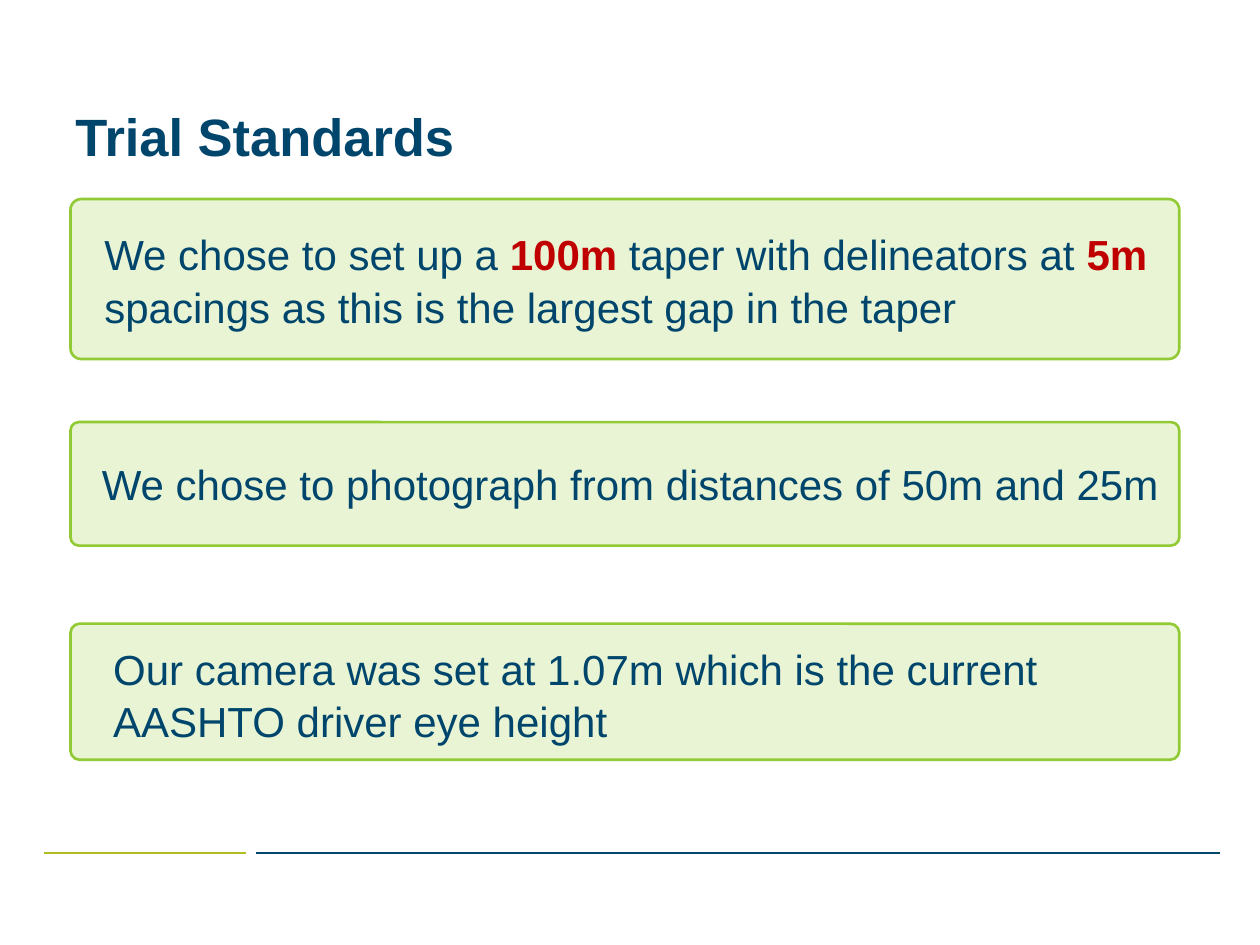
from dataclasses import dataclass

from lxml import etree
from pptx import Presentation
from pptx import util as u
from pptx.dml.color import RGBColor
from pptx.enum import shapes, text
from pptx.oxml.ns import qn


@dataclass(frozen=True)
class Theme:
    font: str = "Arial"
    navy: str = "00456B"
    rule_navy: str = "00456A"
    rule_green: str = "AFBD21"
    panel_fill: str = "E8F4D4"
    panel_line: str = "91CA34"
    emphasis: str = "C00000"
    title_size: float = 30
    body_size: float = 24
    rule_width: float = 0.75
    panel_width: float = 1.5


class SlideBuilder:
    def __init__(self, slide, theme):
        self.slide = slide
        self.theme = theme

    def rule(self, left, right, top, color):
        line = self.slide.shapes.add_connector(
            shapes.MSO_CONNECTOR.STRAIGHT,
            u.Inches(left), u.Inches(top), u.Inches(right), u.Inches(top))
        line.line.color.rgb = RGBColor.from_string(color)
        line.line.width = u.Pt(self.theme.rule_width)
        etree.SubElement(line._element.spPr, qn("a:effectLst"))

    def panel(self, left, top, width, height):
        shape = self.slide.shapes.add_shape(
            shapes.MSO_SHAPE.ROUNDED_RECTANGLE,
            *map(u.Inches, (left, top, width, height)))
        shape.adjustments[0] = 0.067
        shape.shadow.inherit = False
        shape.fill.solid()
        shape.fill.fore_color.rgb = RGBColor.from_string(self.theme.panel_fill)
        shape.line.color.rgb = RGBColor.from_string(self.theme.panel_line)
        shape.line.width = u.Pt(self.theme.panel_width)

    def text_box(self, box):
        """Add a wrapping text box and return its frame."""
        frame = self.slide.shapes.add_textbox(*map(u.Inches, box)).text_frame
        frame.word_wrap = True
        return frame

    def run(self, paragraph, words, size, color, bold=False):
        run = paragraph.add_run()
        run.text = words
        run.font.name = self.theme.font
        run.font.size = u.Pt(size)
        run.font.bold = bold
        run.font.color.rgb = RGBColor.from_string(color)

    def title(self, box, words):
        frame = self.text_box(box)
        frame.vertical_anchor = text.MSO_ANCHOR.MIDDLE
        self.run(frame.paragraphs[0], words, self.theme.title_size,
                 self.theme.navy, bold=True)

    def statement(self, box, parts):
        """Write (words, emphasised) parts as one paragraph."""
        frame = self.text_box(box)
        frame.margin_top = u.Inches(0.07)
        paragraph = frame.paragraphs[0]
        paragraph.line_spacing = 1.04
        paragraph.space_after = u.Pt(6)
        for words, emphasised in parts:
            color = self.theme.emphasis if emphasised else self.theme.navy
            self.run(paragraph, words, self.theme.body_size, color, emphasised)


PANEL_LEFT, PANEL_WIDTH = 0.56, 8.8
RULE_TOP = 6.77

# Panel top and height, text box, text parts
STATEMENTS = [
    (1.58, 1.27, (0.73, 1.73, 8.51, 0.97), [
        ("We chose to set up a ", False),
        ("100m", True),
        (" taper with delineators at ", False),
        ("5m", True),
        (" spacings as this is the largest gap in the taper", False)]),
    (3.35, 0.98, (0.71, 3.55, 8.66, 0.58), [
        ("We chose to photograph from distances of 50m and 25m", False)]),
    (4.95, 1.08, (0.8, 5.02, 8.09, 0.94), [
        ("Our camera was set at 1.07m which is the current "
         "AASHTO driver eye height", False)]),
]


def main():
    presentation = Presentation()
    presentation.slide_width = u.Inches(10)
    presentation.slide_height = u.Inches(7.5)
    theme = Theme()
    slide = presentation.slides.add_slide(presentation.slide_layouts[6])
    builder = SlideBuilder(slide, theme)

    builder.rule(0.35, 1.95, RULE_TOP, theme.rule_green)
    builder.rule(2.03, 9.68, RULE_TOP, theme.rule_navy)
    builder.title((0.5, 0.6, 9, 0.95), "Trial Standards")
    for top, height, box, parts in STATEMENTS:
        builder.panel(PANEL_LEFT, top, PANEL_WIDTH, height)
        builder.statement(box, parts)

    presentation.save("out.pptx")


if __name__ == "__main__":
    main()
